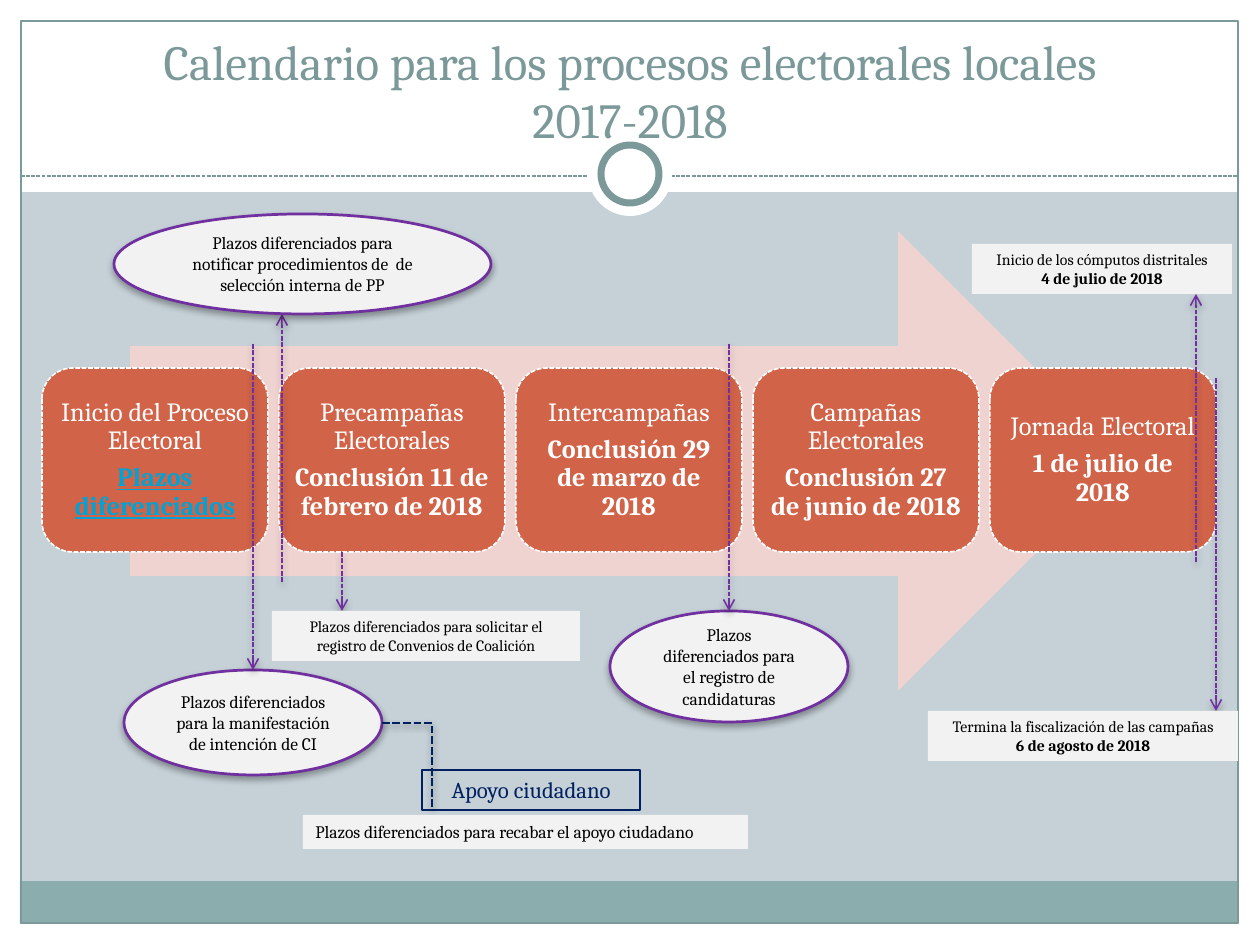
import dataclasses

import lxml.etree
import pptx
import pptx.dml.color
import pptx.enum.dml
import pptx.enum.shapes
import pptx.enum.text
import pptx.oxml.ns
import pptx.util

SHAPE = pptx.enum.shapes.MSO_SHAPE
CONNECTOR = pptx.enum.shapes.MSO_CONNECTOR
ALIGN = pptx.enum.text.PP_ALIGN
ANCHOR = pptx.enum.text.MSO_ANCHOR
DASH = pptx.enum.dml.MSO_LINE.SQUARE_DOT
EMU_PER_PX = 914400 / 126


@dataclasses.dataclass(frozen=True)
class Theme:
    font: str = "Cambria"
    background: str = "C5D1D7"
    white: str = "FFFFFF"
    black: str = "000000"
    frame: str = "7C999A"
    footer: str = "8CADAE"
    arrow: str = "EED3D0"
    stage: str = "D16349"
    link: str = "00A3D6"
    purple: str = "7030A0"
    navy: str = "002060"
    note: str = "F2F2F2"
    title_size: int = 28
    stage_size: int = 15
    support_size: int = 13
    bubble_size: int = 10
    note_size: int = 9


THEME = Theme()

STAGES = [
    ("Inicio del Proceso Electoral", "Plazos diferenciados"),
    ("Precampañas Electorales", "Conclusión 11 de febrero de 2018"),
    ("Intercampañas", "Conclusión 29 de marzo de 2018"),
    ("Campañas Electorales", "Conclusión 27 de junio de 2018"),
    ("Jornada Electoral", "1 de julio de 2018"),
]


def px(length):
    return pptx.util.Emu(round(length * EMU_PER_PX))


def rgb(value):
    return pptx.dml.color.RGBColor.from_string(value)


def add_effects(item, shadow):
    properties = item._element.spPr
    effects = properties.find(pptx.oxml.ns.qn("a:effectLst"))
    if effects is None:
        effects = lxml.etree.SubElement(properties, pptx.oxml.ns.qn("a:effectLst"))
    if shadow:
        outer = lxml.etree.SubElement(effects, pptx.oxml.ns.qn("a:outerShdw"),
                                      blurRad="50800", dist="25400", dir="5400000", rotWithShape="0")
        color = lxml.etree.SubElement(outer, pptx.oxml.ns.qn("a:srgbClr"), val=THEME.black)
        lxml.etree.SubElement(color, pptx.oxml.ns.qn("a:alpha"), val="35000")


def style_line(line, color, width, dashed=False):
    line.color.rgb = rgb(color)
    line.width = pptx.util.Pt(width)
    if dashed:
        line.dash_style = DASH


def add_box(page, kind, place, fill=None, line=None, width=0.75, dashed=False, shadow=False):
    box = page.shapes.add_shape(kind, *map(px, place))
    if fill:
        box.fill.solid()
        box.fill.fore_color.rgb = rgb(fill)
    else:
        box.fill.background()
    if line:
        style_line(box.line, line, width, dashed)
    else:
        box.line.fill.background()
    box.shadow.inherit = False
    if shadow:
        add_effects(box, True)
    return box


def add_line(page, start, end, color=THEME.purple, width=0.9, kind=CONNECTOR.STRAIGHT,
             arrow=True, shadow=True, target=None):
    line = page.shapes.add_connector(kind, *map(px, (*start, *end)))
    style_line(line.line, color, width, dashed=True)
    if arrow:
        lxml.etree.SubElement(line.line._get_or_add_ln(), pptx.oxml.ns.qn("a:tailEnd"), type="arrow")
    add_effects(line, shadow)
    if target is not None:
        line.end_connect(target, 0)
    return line


def write(box, *paragraphs, size, color=THEME.black, align=ALIGN.CENTER, anchor=ANCHOR.MIDDLE,
          spacing=1.0, after=0, inset=None, link=False):
    frame = box.text_frame
    frame.word_wrap = True
    frame.auto_size = pptx.enum.text.MSO_AUTO_SIZE.NONE
    frame.vertical_anchor = anchor
    if inset is not None:
        frame.margin_left = frame.margin_right = px(inset)
        frame.margin_top = frame.margin_bottom = px(inset)
    for index, text in enumerate(paragraphs):
        para = frame.paragraphs[0] if index == 0 else frame.add_paragraph()
        para.alignment = align
        para.line_spacing = spacing
        para.space_before = pptx.util.Pt(0)
        para.space_after = pptx.util.Pt(after)
        is_link = link and index > 0
        span = para.add_run()
        span.text = text
        span.font.name = THEME.font
        span.font.size = pptx.util.Pt(size)
        span.font.bold = index > 0
        span.font.underline = is_link
        span.font.color.rgb = rgb(THEME.link if is_link else color)


def add_frame(page):
    page.background.fill.solid()
    page.background.fill.fore_color.rgb = rgb(THEME.background)
    for place in [(0, 924, 1260, 21), (0, 0, 1260, 192), (0, 0, 21, 945), (1239, 0, 21, 945)]:
        add_box(page, SHAPE.RECTANGLE, place, fill=THEME.white)
    add_box(page, SHAPE.RECTANGLE, (20, 881, 1218, 43), fill=THEME.footer)
    add_box(page, SHAPE.RECTANGLE, (21, 21, 1217, 902), line=THEME.frame)
    add_line(page, (21, 176), (1239, 176), THEME.frame, 0.75, arrow=False, shadow=False)
    add_box(page, SHAPE.OVAL, (588, 132, 84, 84), fill=THEME.white)
    add_box(page, SHAPE.OVAL, (601, 145, 58, 58), fill=THEME.white, line=THEME.frame, width=4)


def add_title(page, text):
    title = page.shapes.title
    title.left, title.top, title.width, title.height = map(px, (104, 50, 1052, 105))
    write(title, text, size=THEME.title_size, color=THEME.frame, anchor=ANCHOR.BOTTOM)
    title.element.getparent().append(title.element)


def add_stages(page):
    add_box(page, SHAPE.RIGHT_ARROW, (130, 231, 998, 460), fill=THEME.arrow)
    for index, (name, date) in enumerate(STAGES):
        box = add_box(page, SHAPE.ROUNDED_RECTANGLE, (42 + 237 * index, 368, 226, 184),
                      fill=THEME.stage, line=THEME.white, width=0.9, dashed=True)
        write(box, name, date, size=THEME.stage_size, color=THEME.white, spacing=0.9,
              after=5, inset=7, link=index == 0)


def add_bubble(page, place, text):
    bubble = add_box(page, SHAPE.OVAL, place, fill=THEME.note, line=THEME.purple,
                     width=1.57, shadow=True)
    write(bubble, text, size=THEME.bubble_size)
    return bubble


def add_note(page, place, *paragraphs, size=THEME.note_size, align=ALIGN.CENTER):
    note = add_box(page, SHAPE.RECTANGLE, place, fill=THEME.note)
    write(note, *paragraphs, size=size, align=align, anchor=ANCHOR.TOP)


def add_support(page):
    elbow = add_line(page, (382, 723), (432, 810), THEME.navy, 1.5, CONNECTOR.ELBOW, arrow=False)
    elbow._element.spPr.find(pptx.oxml.ns.qn("a:prstGeom")).set("prst", "bentConnector2")
    add_note(page, (303, 815, 445, 34), "Plazos diferenciados para recabar el apoyo ciudadano",
             size=THEME.bubble_size, align=ALIGN.LEFT)
    label = add_box(page, SHAPE.RECTANGLE, (422, 770, 218, 40), line=THEME.navy)
    write(label, "Apoyo ciudadano", size=THEME.support_size, color=THEME.navy, anchor=ANCHOR.TOP)


def main():
    deck = pptx.Presentation()
    deck.slide_width, deck.slide_height = px(1260), px(945)
    page = deck.slides.add_slide(deck.slide_layouts[5])
    add_frame(page)
    add_title(page, "Calendario para los procesos electorales locales 2017-2018")
    add_stages(page)

    intention = add_bubble(page, (124, 670, 258, 105),
                           "Plazos diferenciados para la manifestación de intención de CI")
    add_line(page, (253, 344), (253, 670), target=intention)
    add_line(page, (282, 582), (282, 314))
    add_bubble(page, (114, 214, 377, 100),
               "Plazos diferenciados para notificar procedimientos de  de selección interna de PP")
    add_support(page)

    add_line(page, (342, 552), (342, 611))
    add_note(page, (272, 611, 308, 50),
             "Plazos diferenciados para solicitar el registro de Convenios de Coalición")
    candidacies = add_bubble(page, (610, 611, 238, 111),
                             "Plazos diferenciados para el registro de candidaturas")
    add_line(page, (729, 344), (729, 611), target=candidacies)

    add_line(page, (1216, 378), (1216, 711))
    add_line(page, (1196, 562), (1196, 294))
    add_note(page, (972, 244, 260, 50), "Inicio de los cómputos distritales", "4 de julio de 2018")
    add_note(page, (928, 711, 310, 50), "Termina la fiscalización de las campañas",
             "6 de agosto de 2018")
    deck.save("out.pptx")


if __name__ == "__main__":
    main()
